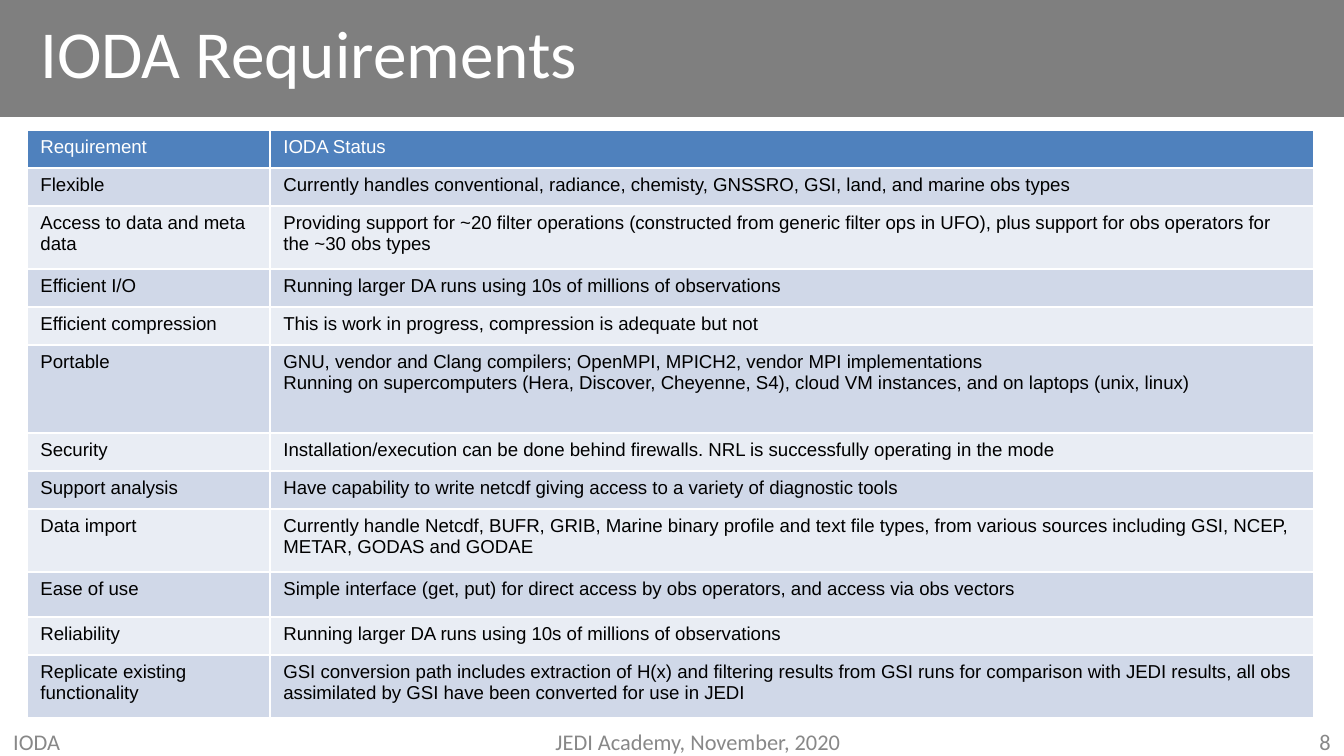
from lxml import etree
from pptx import Presentation
from pptx.dml.color import RGBColor
from pptx.enum.shapes import MSO_SHAPE as Shape
from pptx.enum.text import MSO_ANCHOR as Anchor, PP_ALIGN as Align
from pptx.oxml.ns import qn
from pptx.util import Pt

PX = 6804  # EMU per px, 1344 px across 10 inches


def color(hex_code):
    return RGBColor.from_string(hex_code)


def add_text(para, text, size, font, hex_code):
    span = para.add_run()
    span.text = text
    span.font.size = Pt(size)
    span.font.name = font
    span.font.bold = False
    span.font.color.rgb = color(hex_code)


deck = Presentation()
deck.slide_width, deck.slide_height = 1344 * PX, 756 * PX
page = deck.slides.add_slide(deck.slide_layouts[6])

# Title band: half-transparent black
band = page.shapes.add_shape(Shape.RECTANGLE, 0, 0, 1344 * PX, 117 * PX)
band.shadow.inherit = False
band.line.fill.background()
band.fill.solid()
band.fill.fore_color.rgb = color("000000")
tint = band.fill._xPr.find(".//" + qn("a:srgbClr"))
etree.SubElement(tint, qn("a:alpha"), val="50000")

# Title and footer texts
texts = [
    ("IODA Requirements", 27, 0, 1121, 104, 36, "FFFFFF", Align.LEFT),
    ("IODA", 0, 728, 313, 28, 12, "888888", Align.LEFT),
    ("JEDI Academy, November, 2020", 485, 728, 426, 28, 12, "888888", Align.CENTER),
    ("8", 1031, 728, 313, 28, 12, "888888", Align.RIGHT),
]
for text, left, top, width, height, size, hex_code, align in texts:
    box = page.shapes.add_textbox(left * PX, top * PX, width * PX, height * PX)
    frame = box.text_frame
    frame.word_wrap = True
    frame.vertical_anchor = Anchor.MIDDLE
    para = frame.paragraphs[0]
    para.alignment = align
    add_text(para, text, size, "Calibri", hex_code)

# Requirements: row height, requirement, status paragraphs
rows = [
    (38, "Requirement", ["IODA Status"]),
    (38, "Flexible", ["Currently handles conventional, radiance, chemisty, GNSSRO, GSI, land, "
                      "and marine obs types"]),
    (63, "Access to data and meta data",
     ["Providing support for ~20 filter operations (constructed from generic filter ops in UFO), "
      "plus support for obs operators for the ~30 obs types"]),
    (38, "Efficient I/O", ["Running larger DA runs using 10s of millions of observations"]),
    (38, "Efficient compression", ["This is work in progress, compression is adequate but not"]),
    (88, "Portable",
     ["GNU, vendor and Clang compilers; OpenMPI, MPICH2, vendor MPI implementations",
      "Running on supercomputers (Hera, Discover, Cheyenne, S4), cloud VM instances, "
      "and on laptops (unix, linux)"]),
    (38, "Security", ["Installation/execution can be done behind firewalls. "
                      "NRL is successfully operating in the mode"]),
    (38, "Support analysis", ["Have capability to write netcdf giving access to a variety of "
                              "diagnostic tools"]),
    (63, "Data import",
     ["Currently handle Netcdf, BUFR, GRIB, Marine binary profile and text file types, "
      "from various sources including GSI, NCEP, METAR, GODAS and GODAE"]),
    (45, "Ease of use", ["Simple interface (get, put) for direct access by obs operators, "
                         "and access via obs vectors"]),
    (38, "Reliability", ["Running larger DA runs using 10s of millions of observations"]),
    (63, "Replicate existing functionality",
     ["GSI conversion path includes extraction of H(x) and filtering results from GSI runs "
      "for comparison with JEDI results, all obs assimilated by GSI have been converted "
      "for use in JEDI"]),
]
table_height = sum(row[0] for row in rows)
table = page.shapes.add_table(len(rows), 2, 27 * PX, 130 * PX, 1287 * PX, table_height * PX).table
table.columns[0].width = 243 * PX
table.columns[1].width = 1044 * PX

for r, (height, requirement, status) in enumerate(rows):
    table.rows[r].height = height * PX
    fill = "4F81BD" if r == 0 else ("E9EDF4", "D0D8E8")[r % 2]
    ink = "FFFFFF" if r == 0 else "000000"
    for c, lines in enumerate([[requirement], status]):
        cell = table.cell(r, c)
        # White borders, which must come before the fill
        props = cell._tc.get_or_add_tcPr()
        for side in ("lnL", "lnR", "lnT", "lnB"):
            border = etree.SubElement(props, qn("a:" + side), w=str(Pt(1)))
            solid = etree.SubElement(border, qn("a:solidFill"))
            etree.SubElement(solid, qn("a:srgbClr"), val="FFFFFF")
        cell.fill.solid()
        cell.fill.fore_color.rgb = color(fill)
        frame = cell.text_frame
        for i, line in enumerate(lines):
            para = frame.add_paragraph() if i else frame.paragraphs[0]
            add_text(para, line, 10, "Arial", ink)

deck.save("out.pptx")
